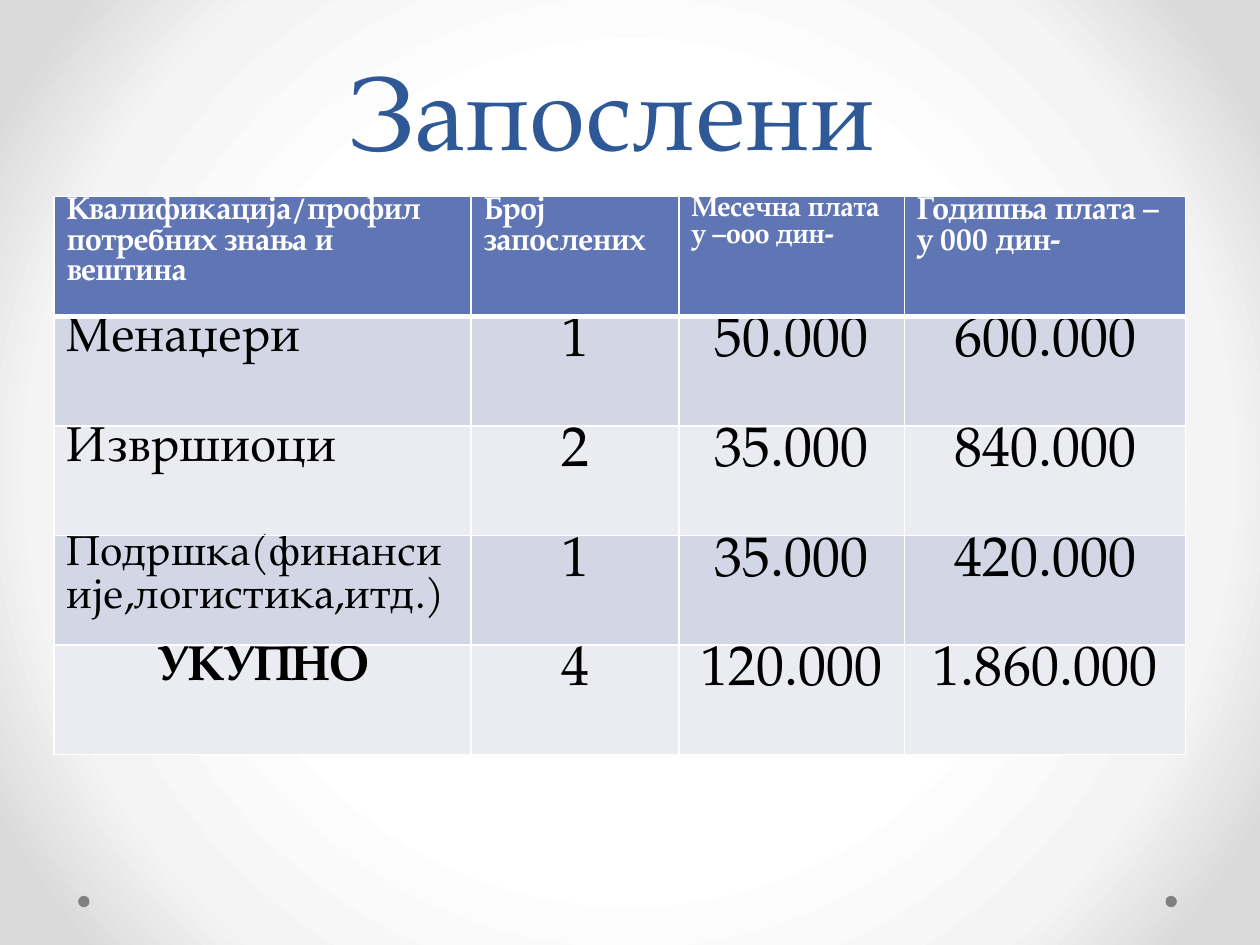
from lxml import etree
from pptx import Presentation
from pptx import util as u
from pptx.dml.color import RGBColor
from pptx.enum import shapes, text
from pptx.oxml import parse_xml
from pptx.oxml.ns import nsdecls, qn

COLORS = {
    "title": "2F5897", "header": "6076B4", "band": "D2D6E5", "light": "EAECF2",
    "white": "FFFFFF", "black": "000000", "dot": "808080",
}
BACKDROP = [(50, "FFFFFF"), (76, "F4F4F4"), (92, "DADADA")]
HEADERS = [
    ("Квалификација/профил потребних знања и вештина", 18),
    ("Број\nзапослених", 18),
    ("Месечна плата у –ооо дин-", 16),
    ("Годишња плата –у 000 дин-", 18),
]
STAFF = [
    ("Менаџери", 28, "1", "50.000", "600.000"),
    ("Извршиоци", 28, "2", "35.000", "840.000"),
    ("Подршка(финансиије,логистика,итд.)", 24, "1", "35.000", "420.000"),
    ("УКУПНО", 28, "4", "120.000", "1.860.000"),
]
TOTAL = "УКУПНО"


class Deck:
    font = "TeX Gyre Pagella"

    def __init__(self, width, height):
        self.prs = Presentation()
        self.prs.slide_width = u.Inches(width)
        self.prs.slide_height = u.Inches(height)
        self.s = self.prs.slides.add_slide(self.prs.slide_layouts[5])

    def color(self, name):
        return RGBColor.from_string(COLORS[name])

    def background(self, stops):
        self.s.background.fill.gradient()
        old = self.s.element.find(".//" + qn("a:gradFill"))
        gs = "".join(f'<a:gs pos="{pos * 1000}"><a:srgbClr val="{c}"/></a:gs>' for pos, c in stops)
        old.getparent().replace(old, parse_xml(
            f'<a:gradFill {nsdecls("a")} rotWithShape="1"><a:gsLst>{gs}</a:gsLst>'
            '<a:path path="circle"><a:fillToRect l="50000" t="50000" r="50000" b="50000"/>'
            '</a:path></a:gradFill>'))

    def style(self, p, size, color, bold=False, centered=False):
        p.font.name, p.font.size, p.font.bold = self.font, u.Pt(size), bold
        p.font.color.rgb = self.color(color)
        p.alignment = text.PP_ALIGN.CENTER if centered else text.PP_ALIGN.LEFT

    def title(self, words, x, y, w, h):
        sp = self.s.shapes.title
        sp.left, sp.top, sp.width, sp.height = map(u.Inches, (x, y, w, h))
        tf = sp.text_frame
        tf.text = words
        tf.vertical_anchor = text.MSO_ANCHOR.BOTTOM
        tf.auto_size = text.MSO_AUTO_SIZE.NONE
        p = tf.paragraphs[0]
        p.line_spacing = u.Pt(58)
        self.style(p, 60, "title", centered=True)

    def dot(self, x, y, d):
        sp = self.s.shapes.add_shape(shapes.MSO_SHAPE.OVAL, *map(u.Inches, (x, y, d, d)))
        sp.shadow.inherit = False
        sp.fill.solid()
        sp.fill.fore_color.rgb = self.color("dot")
        sp.line.fill.background()

    def table(self, x, y, cols, rows):
        box = map(u.Inches, (x, y, sum(cols), sum(rows)))
        tbl = self.s.shapes.add_table(len(rows), len(cols), *box).table
        for col, w in zip(tbl.columns, cols):
            col.width = u.Inches(w)
        for row, h in zip(tbl.rows, rows):
            row.height = u.Inches(h)
        return tbl

    def cell(self, cell, words, fill, size, color, bold=False, centered=False, bottom=1):
        cell.margin_top = cell.margin_bottom = 0
        cell.text = words
        for p in cell.text_frame.paragraphs:
            self.style(p, size, color, bold, centered)
        tcPr = cell._tc.get_or_add_tcPr()
        for side, width in (("L", 1), ("R", 1), ("T", 1), ("B", bottom)):
            ln = etree.SubElement(tcPr, qn(f"a:ln{side}"), w=str(u.Pt(width)))
            paint = etree.SubElement(ln, qn("a:solidFill"))
            etree.SubElement(paint, qn("a:srgbClr"), val=COLORS["white"])
        cell.fill.solid()
        cell.fill.fore_color.rgb = self.color(fill)


def main():
    d = Deck(10, 7.5)
    d.background(BACKDROP)
    for x in (9.25, 0.62):
        d.dot(x, 7.11, 0.09)
    d.title("Запослени", 0.35, -0.34, 9, 1.75)
    tbl = d.table(0.43, 1.56, [3.31, 1.65, 1.79, 2.23], [0.95] + [0.87] * len(STAFF))
    for c, (words, size) in enumerate(HEADERS):
        d.cell(tbl.cell(0, c), words, "header", size, "white", bold=True, bottom=3)
    for r, (role, size, *figures) in enumerate(STAFF, 1):
        fill = "band" if r % 2 else "light"
        total = role == TOTAL
        d.cell(tbl.cell(r, 0), role, fill, size, "black", bold=total, centered=total)
        for c, figure in enumerate(figures, 1):
            d.cell(tbl.cell(r, c), figure, fill, 32, "black", centered=True)
    d.prs.save("out.pptx")


if __name__ == "__main__":
    main()
